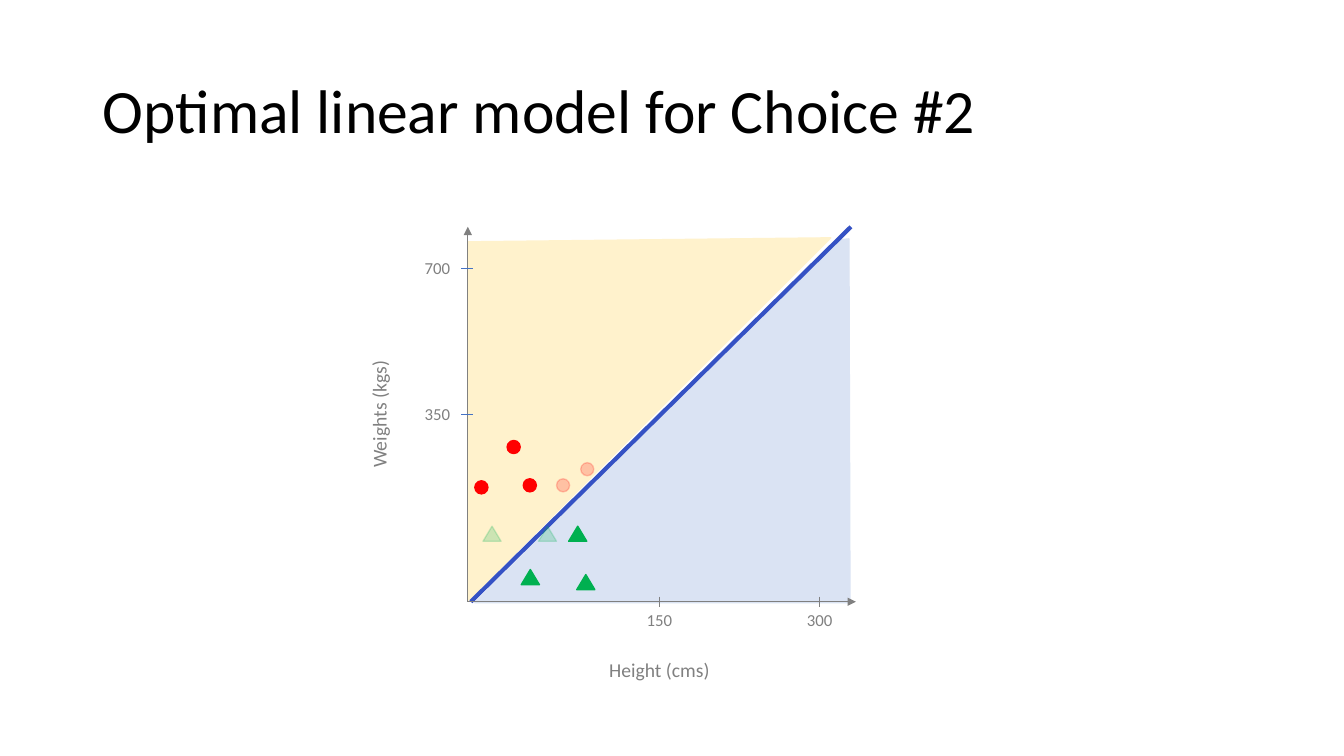
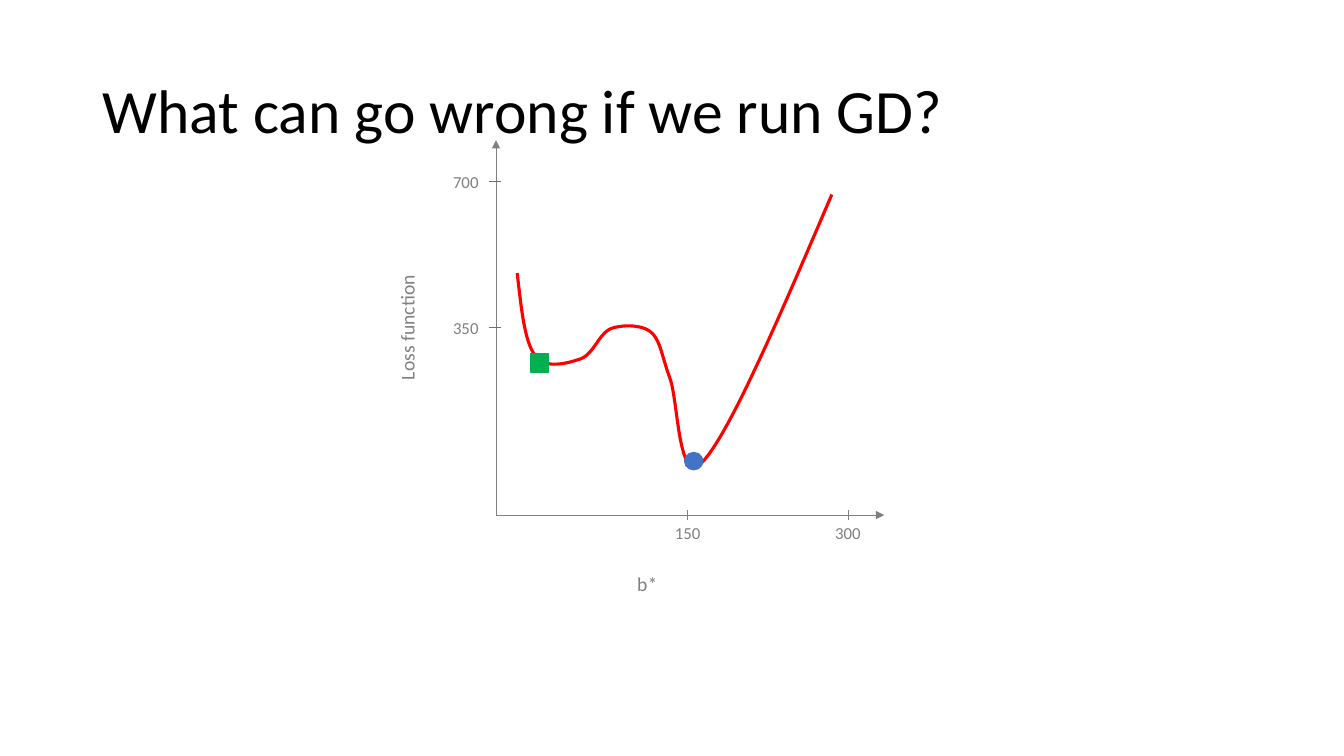
from dataclasses import dataclass
from typing import NamedTuple

from lxml.etree import SubElement
from pptx import Presentation
from pptx.dml.color import RGBColor
from pptx.enum.shapes import MSO_CONNECTOR, MSO_SHAPE as Preset
from pptx.enum.text import MSO_ANCHOR as Anchor, MSO_AUTO_SIZE as AutoSize, PP_ALIGN as Align
from pptx.oxml.ns import qn
from pptx.util import Inches, Pt


@dataclass(frozen=True)
class Theme:
    font: str = "Calibri"
    ink: str = "000000"
    gray: str = "808080"
    blue: str = "4472C4"
    boundary: str = "3552C4"
    red: str = "FF0000"
    green: str = "00B050"
    pale_blue: str = "DAE3F3"
    pale_yellow: str = "FFF2CC"
    title_size: float = 44
    label_size: float = 14
    tick_size: float = 12
    hairline: float = 0.5
    outline: float = 1
    curve: float = 2.25
    bold_line: float = 3


THEME = Theme()


class Point(NamedTuple):
    x: float
    y: float


class Tick(NamedTuple):
    label: str
    offset: float


@dataclass(frozen=True)
class Marker:
    preset: Preset
    color: str
    width: float
    height: float
    places: tuple[Point, ...]
    opacity: int = 100


@dataclass(frozen=True)
class Axes:
    origin: Point
    x_label: str
    x_label_offset: float
    y_label: str


X_TICKS = (Tick("300", 3.49), Tick("150", 1.9))
Y_TICKS = (Tick("700", 3.31), Tick("350", 1.86))
X_LENGTH, Y_LENGTH = 3.85, 3.72


def write(frame, text: str, *, size: float, color: str = THEME.gray,
          align: Align = Align.CENTER, spacing: float = 1.0) -> None:
    paragraph = frame.paragraphs[0]
    paragraph.alignment = align
    paragraph.line_spacing = spacing
    run = paragraph.add_run()
    run.text = text
    run.font.name = THEME.font
    run.font.size = Pt(size)
    run.font.color.rgb = RGBColor.from_string(color)


def add_label(slide, text: str, center: Point, *, width: float, height: float,
              size: float, rotation: float = 0) -> None:
    box = slide.shapes.add_textbox(Inches(center.x - width / 2), Inches(center.y - height / 2),
                                   Inches(width), Inches(height))
    box.rotation = rotation
    box.text_frame.word_wrap = False
    write(box.text_frame, text, size=size)


def stroke(line, color: str, width: float) -> None:
    line.color.rgb = RGBColor.from_string(color)
    line.width = Pt(width)


def add_line(slide, start: Point, end: Point, *, color: str = THEME.gray,
             width: float = THEME.hairline, arrow: bool = False) -> None:
    line = slide.shapes.add_connector(MSO_CONNECTOR.STRAIGHT, *map(Inches, (*start, *end)))
    stroke(line.line, color, width)
    if arrow:
        SubElement(line.line._get_or_add_ln(), qn("a:tailEnd"), type="triangle")
    SubElement(line._element.spPr, qn("a:effectLst"))


def add_outline(slide, points: list[Point], *, color: str, width: float, filled: bool) -> None:
    start, *rest = [(Inches(x), Inches(y)) for x, y in points]
    builder = slide.shapes.build_freeform(*start)
    builder.add_line_segments(rest, close=filled)
    outline = builder.convert_to_shape()
    outline.shadow.inherit = False
    stroke(outline.line, color, width)
    if filled:
        outline.fill.solid()
        outline.fill.fore_color.rgb = RGBColor.from_string(color)
    else:
        outline.fill.background()


def add_markers(slide, marker: Marker) -> None:
    for place in marker.places:
        shape = slide.shapes.add_shape(marker.preset, *map(Inches, (*place, marker.width, marker.height)))
        shape.shadow.inherit = False
        shape.fill.solid()
        shape.fill.fore_color.rgb = RGBColor.from_string(marker.color)
        stroke(shape.line, marker.color, THEME.outline)
        if marker.opacity < 100:
            for color in shape._element.spPr.iter(qn("a:srgbClr")):
                SubElement(color, qn("a:alpha"), val=str(marker.opacity * 1000))


def add_axes(slide, axes: Axes) -> None:
    left, base = axes.origin
    add_line(slide, axes.origin, Point(left, base - Y_LENGTH), arrow=True)
    add_line(slide, axes.origin, Point(left + X_LENGTH, base), arrow=True)
    add_label(slide, axes.x_label, Point(left + axes.x_label_offset, base + 0.68),
              width=1.21, height=0.34, size=THEME.label_size)
    add_label(slide, axes.y_label, Point(left - 0.88, base - 1.86),
              width=1.27, height=0.34, size=THEME.label_size, rotation=270)
    for tick in X_TICKS:
        x = left + tick.offset
        add_line(slide, Point(x, base - 0.05), Point(x, base + 0.05))
        add_label(slide, tick.label, Point(x, base + 0.18), width=0.46, height=0.3, size=THEME.tick_size)
    for tick in Y_TICKS:
        y = base - tick.offset
        add_line(slide, Point(left + 0.05, y), Point(left - 0.07, y), color=THEME.blue)
        add_label(slide, tick.label, Point(left - 0.3, y), width=0.46, height=0.3, size=THEME.tick_size)


def bezier_points(knots: list[Point], steps: int = 16) -> list[Point]:
    points = [knots[0]]
    for first in range(0, len(knots) - 1, 3):
        segment = knots[first:first + 4]
        for step in range(1, steps + 1):
            t = step / steps
            weights = ((1 - t) ** 3, 3 * t * (1 - t) ** 2, 3 * t ** 2 * (1 - t), t ** 3)
            points.append(Point(sum(w * p.x for w, p in zip(weights, segment)),
                                sum(w * p.y for w, p in zip(weights, segment))))
    return points


def add_titled_slide(deck, text: str):
    slide = deck.slides.add_slide(deck.slide_layouts[5])
    title = slide.shapes.title
    title.left, title.top, title.width, title.height = map(Inches, (0.92, 0.4, 11.5, 1.45))
    frame = title.text_frame
    frame.word_wrap = True
    frame.auto_size = AutoSize.NONE
    frame.vertical_anchor = Anchor.MIDDLE
    write(frame, text, size=THEME.title_size, color=THEME.ink, align=Align.LEFT, spacing=0.9)
    return slide


def build_linear_model(deck) -> None:
    slide = add_titled_slide(deck, "Optimal linear model for Choice #2")
    below = [Point(4.71, 5.98), Point(8.32, 2.38), Point(8.42, 2.37), Point(8.43, 5.98)]
    above = [Point(4.64, 5.96), Point(8.24, 2.36), Point(4.64, 2.4)]
    for region, color in ((below, THEME.pale_blue), (above, THEME.pale_yellow)):
        add_outline(slide, region, color=color, width=THEME.outline, filled=True)
    add_line(slide, Point(4.67, 5.97), Point(8.44, 2.25), color=THEME.boundary, width=THEME.bold_line)
    add_axes(slide, Axes(Point(4.64, 5.97), "Height (cms)", 1.9, "Weights (kgs)"))

    circle = (Preset.OVAL, THEME.red, 0.13, 0.13)
    triangle = (Preset.ISOSCELES_TRIANGLE, THEME.green, 0.18, 0.15)
    for marker in (
        Marker(*circle, (Point(5.03, 4.37), Point(4.71, 4.77), Point(5.19, 4.75))),
        Marker(*circle, (Point(5.52, 4.75), Point(5.76, 4.59)), opacity=20),
        Marker(*triangle, (Point(5.72, 5.7), Point(5.17, 5.65), Point(5.64, 5.22))),
        Marker(*triangle, (Point(5.34, 5.22), Point(4.79, 5.22)), opacity=20),
    ):
        add_markers(slide, marker)


def build_gradient_descent(deck) -> None:
    slide = add_titled_slide(deck, "What can go wrong if we run GD?")
    add_axes(slide, Axes(Point(4.92, 5.11), "b*", 1.5, "Loss function"))
    loss_knots = [
        Point(5.13, 2.71),
        Point(5.17, 3.05), Point(5.2, 3.39), Point(5.31, 3.53),
        Point(5.41, 3.67), Point(5.64, 3.6), Point(5.76, 3.56),
        Point(5.89, 3.51), Point(5.94, 3.31), Point(6.06, 3.26),
        Point(6.17, 3.22), Point(6.36, 3.22), Point(6.45, 3.29),
        Point(6.55, 3.37), Point(6.56, 3.52), Point(6.64, 3.74),
        Point(6.73, 3.95), Point(6.72, 4.88), Point(6.98, 4.57),
        Point(7.25, 4.27), Point(7.75, 3.1), Point(8.25, 1.93),
    ]
    add_outline(slide, bezier_points(loss_knots), color=THEME.red, width=THEME.curve, filled=False)
    global_minimum = Marker(Preset.OVAL, THEME.blue, 0.18, 0.17, (Point(6.79, 4.49),))
    local_minimum = Marker(Preset.RECTANGLE, THEME.green, 0.18, 0.18, (Point(5.26, 3.51),))
    for minimum in (global_minimum, local_minimum):
        add_markers(slide, minimum)


def main() -> None:
    deck = Presentation()
    deck.slide_width, deck.slide_height = Inches(13.33), Inches(7.5)
    build_linear_model(deck)
    build_gradient_descent(deck)
    deck.save("out.pptx")


if __name__ == "__main__":
    main()
